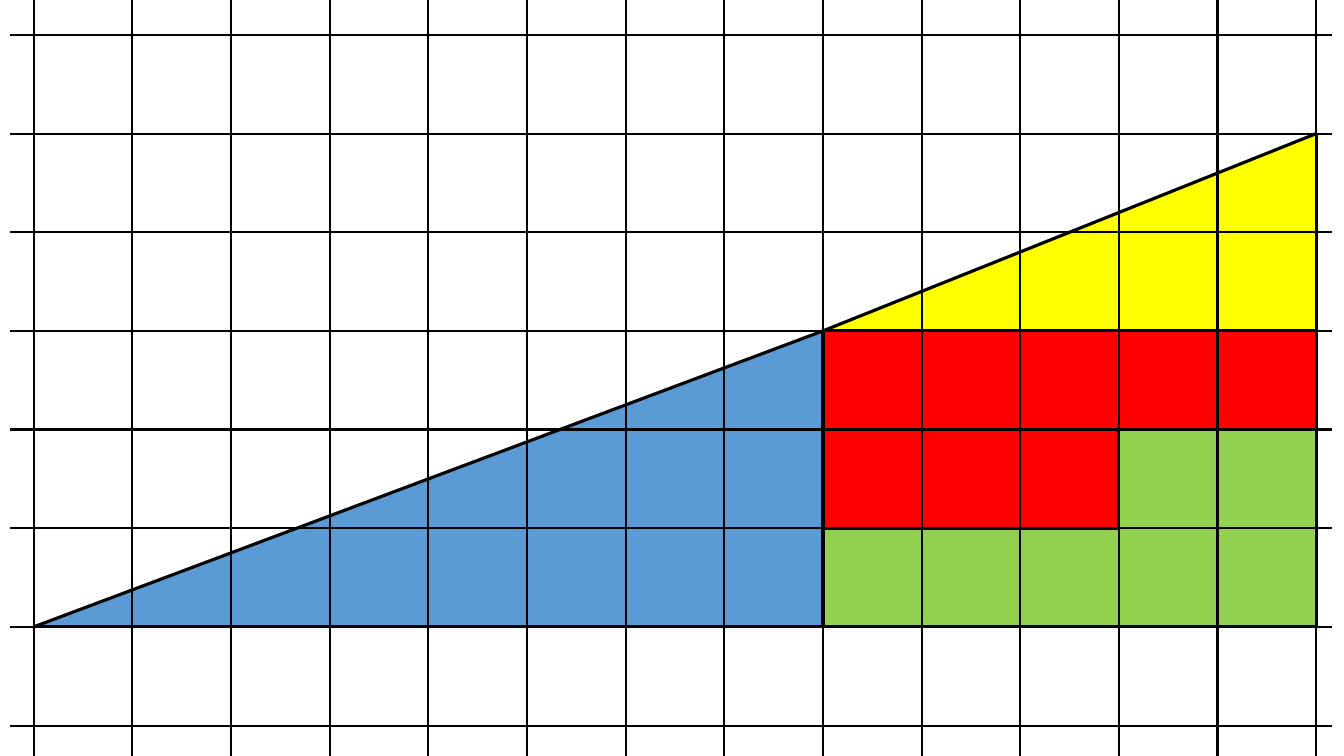
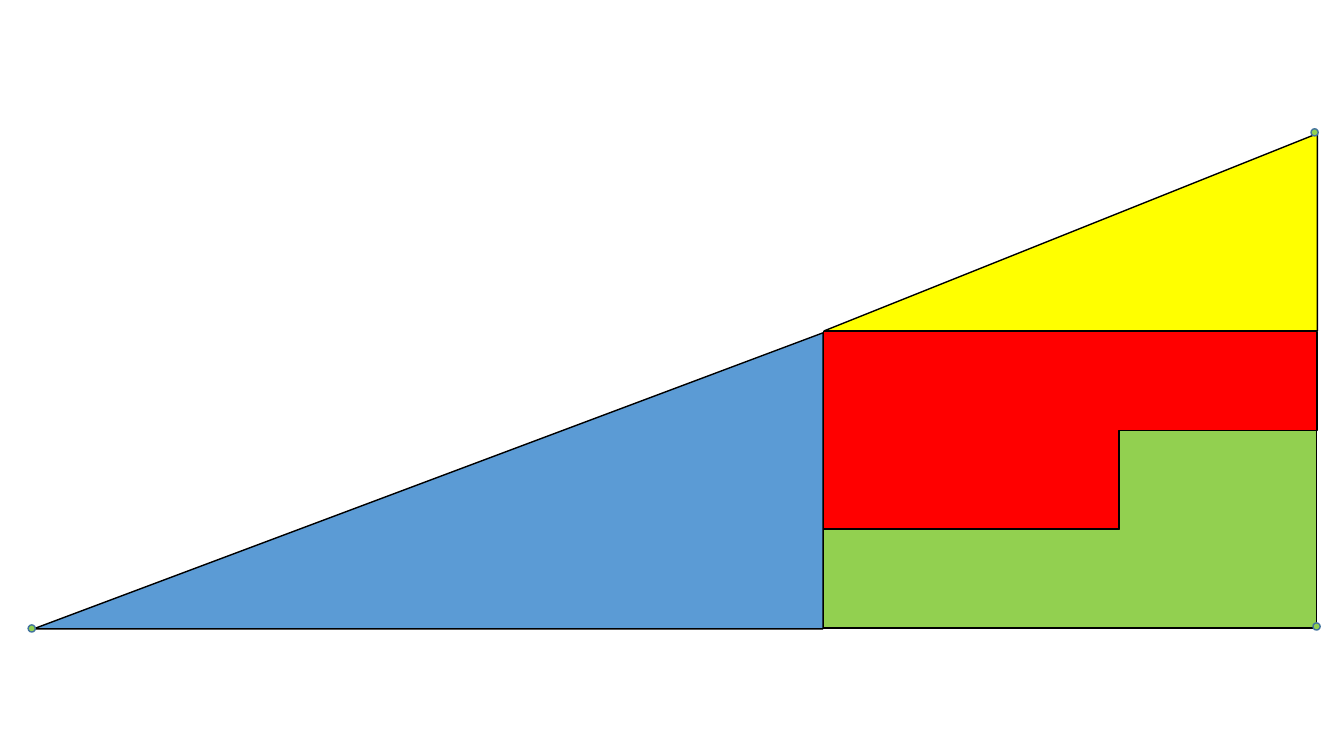
from pptx import Presentation
from pptx.dml.color import RGBColor
from pptx.enum.shapes import MSO_CONNECTOR, MSO_SHAPE
from pptx.oxml.ns import qn
from pptx.util import Cm, Pt
from lxml import etree

STRAIGHT = MSO_CONNECTOR.STRAIGHT
OVAL = MSO_SHAPE.OVAL
BLANK_LAYOUT = 6

SLIDE_WIDTH, SLIDE_HEIGHT = 33.87, 19.05
GRID_LEFT, GRID_RIGHT, GRID_TOP = 0.85, 33.17, 0.88
COLUMNS, ROWS = 13, 7
CELL = (GRID_RIGHT - GRID_LEFT) / COLUMNS
RULE_LEFT, RULE_RIGHT = 0.25, 33.58
DOT_SIZE = 0.18

COLORS = {
    "blue": "5B9BD5",
    "red": "FF0000",
    "green": "92D050",
    "yellow": "FFFF00",
    "black": "000000",
    "dot_edge": "43739E",
}

PIECES = {
    "blue": [(8, 3), (8, 6), (0, 6)],
    "red": [(8, 3), (8, 5), (11, 5), (11, 4), (13, 4), (13, 3)],
    "green": [(8, 5), (8, 6), (13, 6), (13, 4), (11, 4), (11, 5)],
    "yellow": [(8, 3), (13, 3), (13, 1)],
}

OUTLINES = [
    ((0, 6), (8, 6)),
    ((8, 3), (8, 6)),
    ((8, 3), (0, 6)),
    ((13, 1), (13, 6)),
    ((6.38, 6), (13, 6)),
    ((13, 1), (8, 3)),
    ((8, 3), (13, 3)),
    ((11, 4), (13, 4)),
    ((8, 5), (11, 5)),
    ((11, 5), (11, 4)),
]

LOOSE_PIECES = [
    ("red", (0.02, 0.02)),
    ("green", (0, 0.03)),
    ("blue", (0, 0.05)),
    ("yellow", (0.03, 0)),
]

CORNER_DOTS = [
    ((0, 6), (-0.05, 0.04)),
    ((13, 6), (0.01, -0.01)),
    ((13, 1), (-0.04, -0.03)),
]


def grid_point(node, shift=(0, 0)):
    column, row = node
    return GRID_LEFT + column * CELL + shift[0], GRID_TOP + row * CELL + shift[1]


class PuzzleDeck:
    def __init__(self):
        self.presentation = Presentation()
        self.presentation.slide_width = Cm(SLIDE_WIDTH)
        self.presentation.slide_height = Cm(SLIDE_HEIGHT)
        self.slide = None

    def new_slide(self):
        layout = self.presentation.slide_layouts[BLANK_LAYOUT]
        self.slide = self.presentation.slides.add_slide(layout)

    def color(self, name):
        return RGBColor.from_string(COLORS[name])

    def paint(self, shape, fill, edge=None):
        shape.shadow.inherit = False
        shape.fill.solid()
        shape.fill.fore_color.rgb = self.color(fill)
        if edge:
            shape.line.color.rgb = self.color(edge)
            shape.line.width = Pt(1)
        else:
            shape.line.fill.background()

    def piece(self, name, shift=(0, 0), edge=None):
        corners = []
        for node in PIECES[name]:
            x, y = grid_point(node, shift)
            corners.append((Cm(x), Cm(y)))
        builder = self.slide.shapes.build_freeform(*corners[0])
        builder.add_line_segments(corners[1:], close=True)
        self.paint(builder.convert_to_shape(), name, edge)

    def line(self, shapes, start, end, width):
        points = [Cm(value) for value in (*start, *end)]
        connector = shapes.add_connector(STRAIGHT, *points)
        connector.line.color.rgb = self.color("black")
        connector.line.width = Pt(width)
        properties = connector._element.find(qn("p:spPr"))
        etree.SubElement(properties, qn("a:effectLst"))

    def grid(self):
        group = self.slide.shapes.add_group_shape()
        for column in range(COLUMNS + 1):
            x, _ = grid_point((column, 0))
            self.line(group.shapes, (x, 0), (x, SLIDE_HEIGHT), 1.5)
        for row in range(ROWS + 1):
            _, y = grid_point((0, row))
            self.line(group.shapes, (RULE_RIGHT, y), (RULE_LEFT, y), 1.5)

    def outline(self, start, end):
        self.line(self.slide.shapes, grid_point(start), grid_point(end), 2.25)

    def dot(self, node, shift):
        x, y = grid_point(node, shift)
        shape = self.slide.shapes.add_shape(
            OVAL,
            Cm(x - DOT_SIZE / 2),
            Cm(y - DOT_SIZE / 2),
            Cm(DOT_SIZE),
            Cm(DOT_SIZE),
        )
        self.paint(shape, "green", "dot_edge")


def main():
    deck = PuzzleDeck()

    deck.new_slide()
    for name in ("green", "red", "blue", "yellow"):
        deck.piece(name)
    deck.grid()
    for start, end in OUTLINES:
        deck.outline(start, end)

    deck.new_slide()
    for name, shift in LOOSE_PIECES:
        deck.piece(name, shift, "black")
    for node, shift in CORNER_DOTS:
        deck.dot(node, shift)

    deck.presentation.save("out.pptx")


if __name__ == "__main__":
    main()
